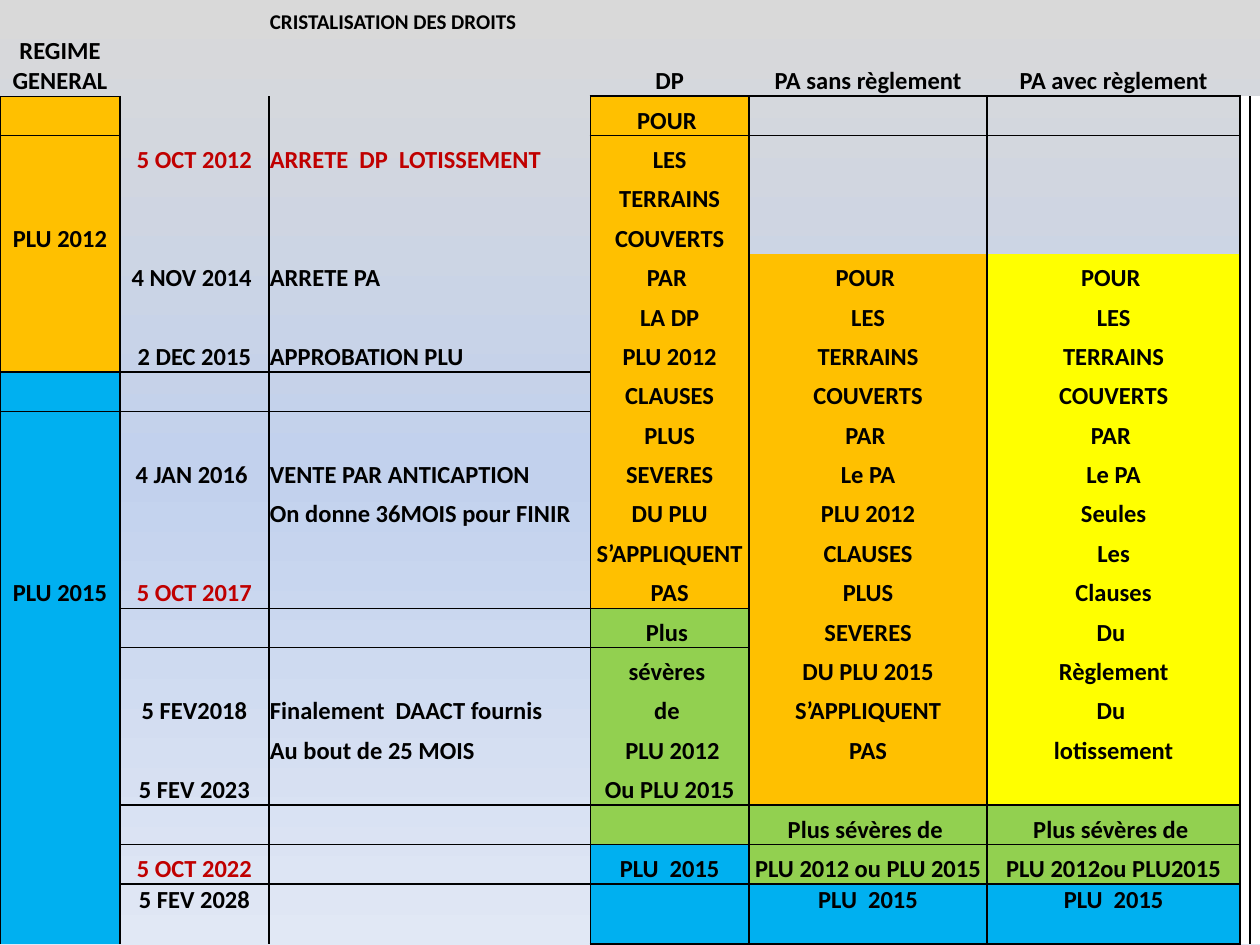
from copy import deepcopy
from lxml import etree
from pptx import Presentation, util as u
from pptx.dml.color import RGBColor
from pptx.enum import text
from pptx.oxml.ns import qn

BLACK, RED, WHITE = "000000", "C00000", "FFFFFF"
ORANGE, YELLOW, GREEN, BLUE = "FFC000", "FFFF00", "92D050", "00B0F0"
NO_STYLE = "{2D5ABB26-0587-4C30-8999-92F81FD0307C}"
WIDTHS = [2.42, 3, 6.48, 3.2, 4.8, 5.1, 0.2, 0.2, 0.1]
HEIGHTS = [0.71, 1.23] + [15.88 / 20] * 20 + [1.21]
LAST = len(HEIGHTS) - 1

# first column, last column, first row, last row, fill, outlined sides, points
BLOCKS = [
    (0, 8, 0, 1, None, "", 1),
    (0, 0, 2, 8, ORANGE, "LRTB", 0.5),
    (0, 0, 9, 22, BLUE, "LRT", 1),
    (1, 2, 2, 8, None, "LRB", 1),
    (1, 2, 9, 14, None, "LRTB", 1),
    (1, 2, 15, 19, None, "LRTB", 1),
    (1, 2, 20, 20, None, "LRTB", 1),
    (1, 2, 21, 21, None, "LRTB", 1),
    (1, 2, 22, 22, None, "LRT", 1),
    (3, 3, 2, 14, ORANGE, "LRTB", 1),
    (3, 3, 15, 19, GREEN, "LRTB", 1),
    (3, 3, 20, 20, GREEN, "LRTB", 1),
    (3, 3, 21, 21, BLUE, "LRTB", 1),
    (3, 3, 22, 22, BLUE, "LRTB", 1),
    (6, 8, 2, 22, WHITE, "L", 1),
]
for col, shade in ((4, ORANGE), (5, YELLOW)):
    BLOCKS += [
        (col, col, 2, 5, None, "LRT", 1),
        (col, col, 6, 19, shade, "LRB", 1),
        (col, col, 20, 21, GREEN, "LRTB", 1),
        (col, col, 22, 22, BLUE, "LRTB", 1),
    ]

# column, first row, one line for each row
LINES = [
    (0, 1, ["REGIME GENERAL"]),
    (0, 5, ["PLU 2012"]),
    (0, 14, ["PLU 2015"]),
    (1, 3, ["5 OCT 2012"]),
    (1, 6, ["4 NOV 2014 "]),
    (1, 8, ["2 DEC 2015"]),
    (1, 11, ["4 JAN 2016 "]),
    (1, 14, ["5 OCT 2017"]),
    (1, 17, ["5 FEV2018"]),
    (1, 19, ["5 FEV 2023"]),
    (1, 21, ["5 OCT 2022", "5 FEV 2028"]),
    (2, 0, ["CRISTALISATION DES DROITS"]),
    (2, 3, ["ARRETE  DP  LOTISSEMENT"]),
    (2, 6, ["ARRETE PA"]),
    (2, 8, ["APPROBATION PLU"]),
    (2, 11, ["VENTE PAR ANTICAPTION", "On donne 36MOIS pour FINIR"]),
    (2, 17, ["Finalement  DAACT fournis", "Au bout de 25 MOIS"]),
    (3, 1, ["DP", "POUR ", "LES", "TERRAINS", "COUVERTS", "PAR ", "LA DP",
            "PLU 2012", "CLAUSES", "PLUS", "SEVERES", "DU PLU",
            "S’APPLIQUENT", "PAS", "Plus ", "sévères ", "de ", " PLU 2012",
            "Ou PLU 2015"]),
    (3, 21, ["PLU  2015"]),
    (4, 1, ["PA sans règlement"]),
    (4, 6, ["POUR ", "LES", "TERRAINS", "COUVERTS", "PAR ", "Le PA",
            "PLU 2012", "CLAUSES", "PLUS", "SEVERES", "DU PLU 2015",
            "S’APPLIQUENT", "PAS"]),
    (4, 20, ["Plus sévères de ", "PLU 2012 ou PLU 2015", "PLU  2015"]),
    (5, 1, ["PA avec règlement"]),
    (5, 6, ["POUR ", "LES", "TERRAINS", "COUVERTS", "PAR ", "Le PA",
            "Seules", "Les", "Clauses", "Du ", "Règlement", "Du ",
            "lotissement"]),
    (5, 20, ["Plus sévères de ", "PLU 2012ou PLU2015", "PLU  2015"]),
]
REDS = {(1, 3), (2, 3), (1, 14), (1, 21)}


def rgb(code):
    return RGBColor.from_string(code)


def write(cell, words, size=14, color=BLACK, align=text.PP_ALIGN.CENTER):
    para = cell.text_frame.paragraphs[0]
    para.alignment = align
    run = para.add_run()
    run.text = words
    font = run.font
    font.name, font.size, font.bold = "Calibri", u.Pt(size), True
    font.color.rgb = rgb(color)


def edge(cell, side, points):
    """Draw one side (L, R, T or B) of a cell in black."""
    line = etree.SubElement(cell._tc.get_or_add_tcPr(), qn(f"a:ln{side}"),
                            w=str(u.Pt(points)))
    fill = etree.SubElement(line, qn("a:solidFill"))
    etree.SubElement(fill, qn("a:srgbClr"), val=BLACK)


def block(table, left, right, top, end, fill, sides, points):
    """Fill a range of cells and outline it on the given sides."""
    for row in range(top, end + 1):
        for col in range(left, right + 1):
            cell = table.cell(row, col)
            outer = {"L": col == left, "R": col == right,
                     "T": row == top, "B": row == end}
            for side, on in outer.items():
                if on and side in sides:
                    edge(cell, side, points)
            if fill:
                cell.fill.solid()
                cell.fill.fore_color.rgb = rgb(fill)
            else:
                cell.fill.background()


def setup(cell, row):
    """Set margins and anchor, and keep empty cells from growing the row."""
    cell.margin_left = cell.margin_right = cell.margin_top = u.Cm(0.02)
    cell.margin_bottom = 0
    anchor = text.MSO_ANCHOR
    cell.vertical_anchor = anchor.TOP if row == LAST else anchor.BOTTOM
    para = cell.text_frame.paragraphs[0]._p
    etree.SubElement(para, qn("a:endParaRPr"), sz="1200")


def grid(slide, left, top):
    frame = slide.shapes.add_table(
        len(HEIGHTS), len(WIDTHS), u.Cm(left), u.Cm(top),
        u.Cm(sum(WIDTHS)), u.Cm(sum(HEIGHTS)))
    table = frame.table
    table.first_row = table.horz_banding = False
    table._tbl.tblPr.find(qn("a:tableStyleId")).text = NO_STYLE
    for col, width in zip(table.columns, WIDTHS):
        col.width = u.Cm(width)
    for num, height in enumerate(HEIGHTS):
        table.rows[num].height = u.Cm(height)
        for cell in table.rows[num].cells:
            setup(cell, num)
    for item in BLOCKS:
        block(table, *item)
    for col, first, lines in LINES:
        for row, words in enumerate(lines, first):
            write(table.cell(row, col), words,
                  size=14 if row else 12,
                  color=RED if (col, row) in REDS else BLACK,
                  align=text.PP_ALIGN.LEFT if col == 2
                  else text.PP_ALIGN.CENTER)


def backdrop(slide, colors):
    """Fill the background with evenly spaced colours from top to bottom."""
    fill = slide.background.fill
    fill.gradient()
    fill.gradient_angle = 270
    stops = slide._element.xpath(".//a:gsLst")[0]
    while len(stops) < len(colors):
        stops.append(deepcopy(stops[0]))
    for num, (stop, code) in enumerate(zip(fill.gradient_stops, colors)):
        stop.position = num / (len(colors) - 1)
        stop.color.rgb = rgb(code)


def main():
    deck = Presentation()
    deck.slide_width, deck.slide_height = u.Cm(25.4), u.Cm(19.05)
    slide = deck.slides.add_slide(deck.slide_layouts[6])
    backdrop(slide, ["D9D9D9", "C2D1ED", "E1E8F5"])
    grid(slide, 0, 0)
    deck.save("out.pptx")


if __name__ == "__main__":
    main()
